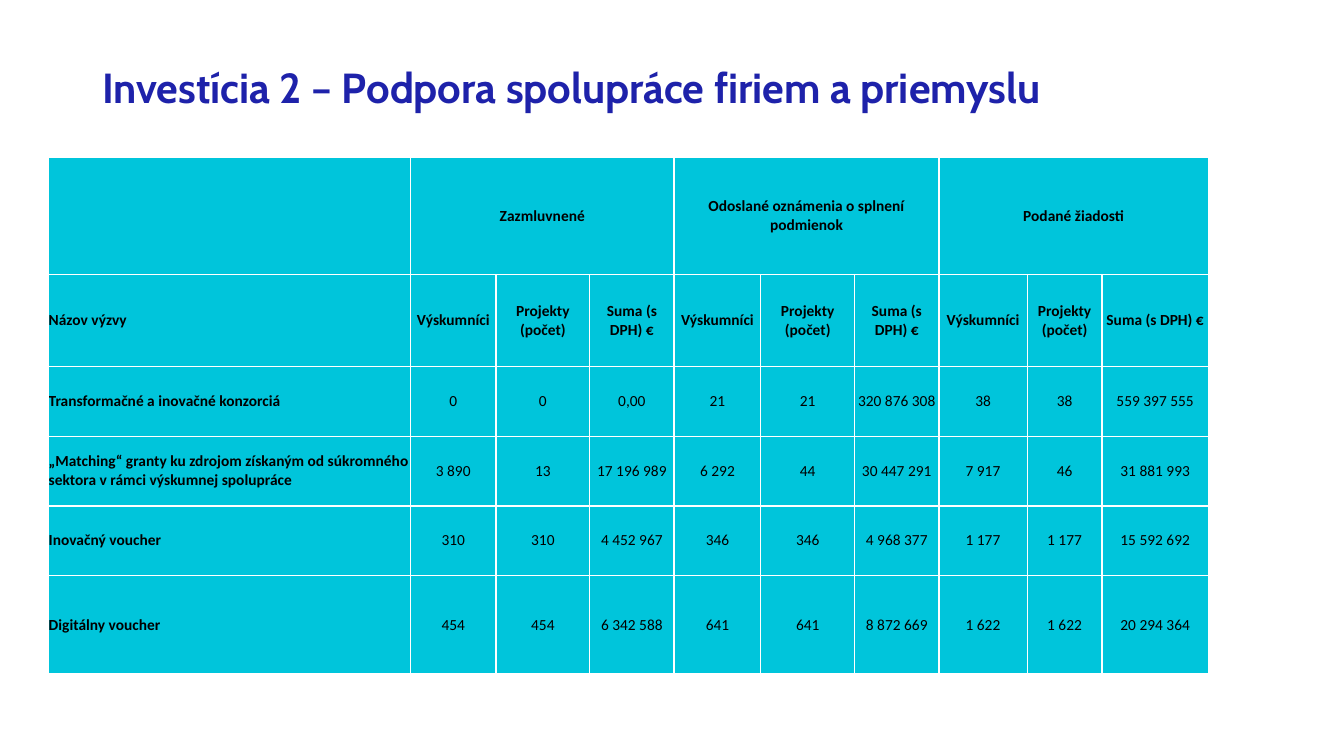
"""Builds the slide on calls supporting cooperation between firms and industry."""
from lxml import etree
from pptx import Presentation
from pptx import util as u
from pptx.dml.color import RGBColor
from pptx.enum import text
from pptx.oxml import ns


def paint(fill, colour):
    fill.solid()
    fill.fore_color.rgb = RGBColor.from_string(colour)


def add_borders(cell, colour, width):
    properties = cell._tc.get_or_add_tcPr()
    for position, side in enumerate(("lnL", "lnR", "lnT", "lnB")):
        line = etree.Element(ns.qn(f"a:{side}"), w=str(u.Pt(width)))
        solid = etree.SubElement(line, ns.qn("a:solidFill"))
        etree.SubElement(solid, ns.qn("a:srgbClr"), val=colour)
        properties.insert(position, line)


deck = Presentation()
deck.slide_width, deck.slide_height = u.Pt(960), u.Pt(540)
slide = deck.slides.add_slide(deck.slide_layouts[6])

heading = slide.shapes.add_textbox(u.Pt(66), u.Pt(44.5), u.Pt(840), u.Pt(61)).text_frame
heading.word_wrap = True
heading.text = "Investícia 2 – Podpora spolupráce firiem a priemyslu"
title = heading.paragraphs[0]
title.line_spacing = 0.9
title.font.name, title.font.size, title.font.bold = "Cabin", u.Pt(30), True
paint(title.font.fill, "1E22AA")

stages = ["Zazmluvnené", "Odoslané oznámenia o splnení podmienok", "Podané žiadosti"]
measures = ["Výskumníci", "Projekty (počet)", "Suma (s DPH) €"]
calls = [
    ["Transformačné a inovačné konzorciá",
     "0", "0", "0,00", "21", "21", "320 876 308", "38", "38", "559 397 555"],
    ["„Matching“ granty ku zdrojom získaným od súkromného sektora v rámci výskumnej spolupráce",
     "3 890", "13", "17 196 989", "6 292", "44", "30 447 291", "7 917", "46", "31 881 993"],
    ["Inovačný voucher",
     "310", "310", "4 452 967", "346", "346", "4 968 377", "1 177", "1 177", "15 592 692"],
    ["Digitálny voucher",
     "454", "454", "6 342 588", "641", "641", "8 872 669", "1 622", "1 622", "20 294 364"],
]
stage_row = [""]
for stage in stages:
    stage_row += [stage, "", ""]
rows = [stage_row, ["Názov výzvy"] + measures * len(stages)] + calls

column_widths = [258.5, 61, 67, 60.25, 62, 67, 60.25, 63, 53.5, 76]
row_heights = [83.5, 66, 49.7, 49.7, 49.7, 70.4]
overview = slide.shapes.add_table(
    len(rows), len(column_widths), u.Pt(34.8), u.Pt(112.5),
    u.Pt(sum(column_widths)), u.Pt(sum(row_heights))).table
for column, width in zip(overview.columns, column_widths):
    column.width = u.Pt(width)
for row, height in zip(overview.rows, row_heights):
    row.height = u.Pt(height)

for r, values in enumerate(rows):
    for c, value in enumerate(values):
        cell = overview.cell(r, c)
        cell.text = value
        cell.vertical_anchor = text.MSO_ANCHOR.MIDDLE
        cell.margin_left = cell.margin_right = cell.margin_top = cell.margin_bottom = 0
        paint(cell.fill, "00C5DB")
        add_borders(cell, "FFFFFF", 1)
        entry = cell.text_frame.paragraphs[0]
        entry.alignment = text.PP_ALIGN.CENTER if c else text.PP_ALIGN.LEFT
        entry.font.name, entry.font.size = "Calibri", u.Pt(11)
        entry.font.bold = r < 2 or c == 0
        paint(entry.font.fill, "000000")

for first in range(1, len(column_widths), len(measures)):
    overview.cell(0, first).merge(overview.cell(0, first + len(measures) - 1))

deck.save("out.pptx")
